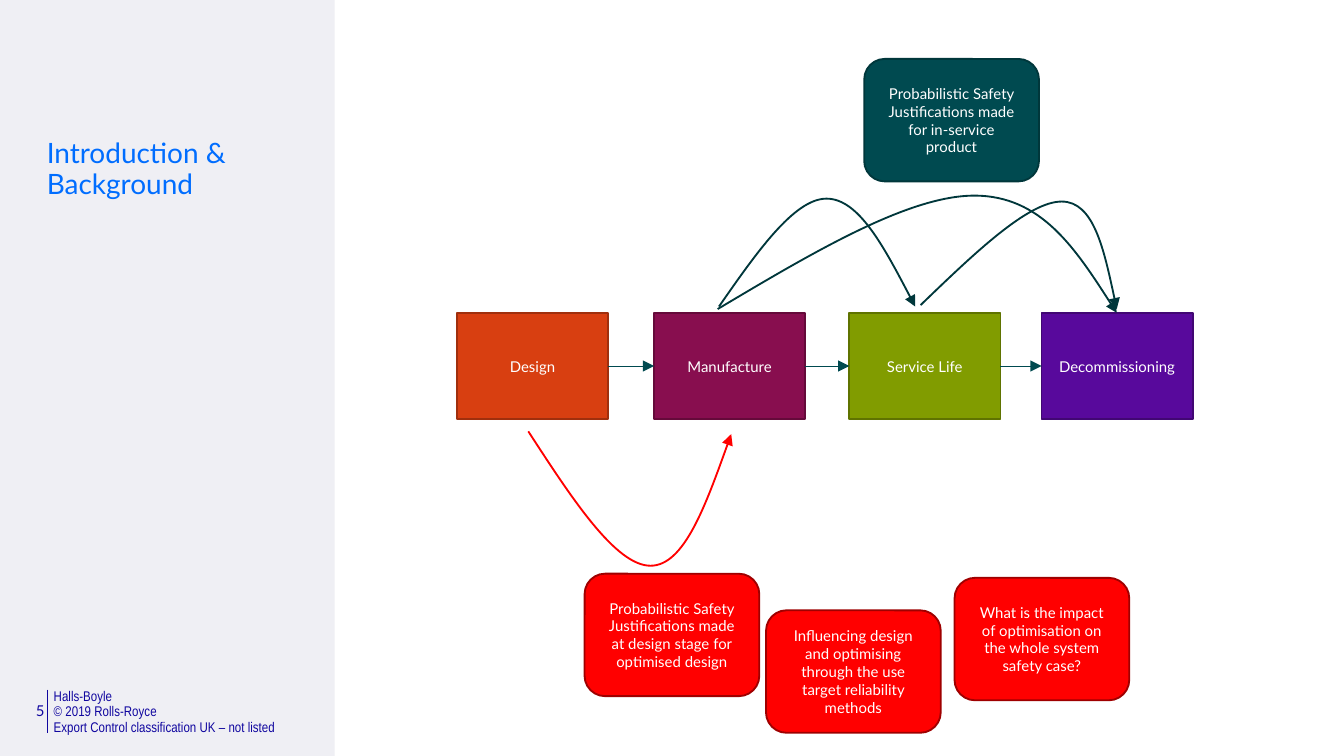
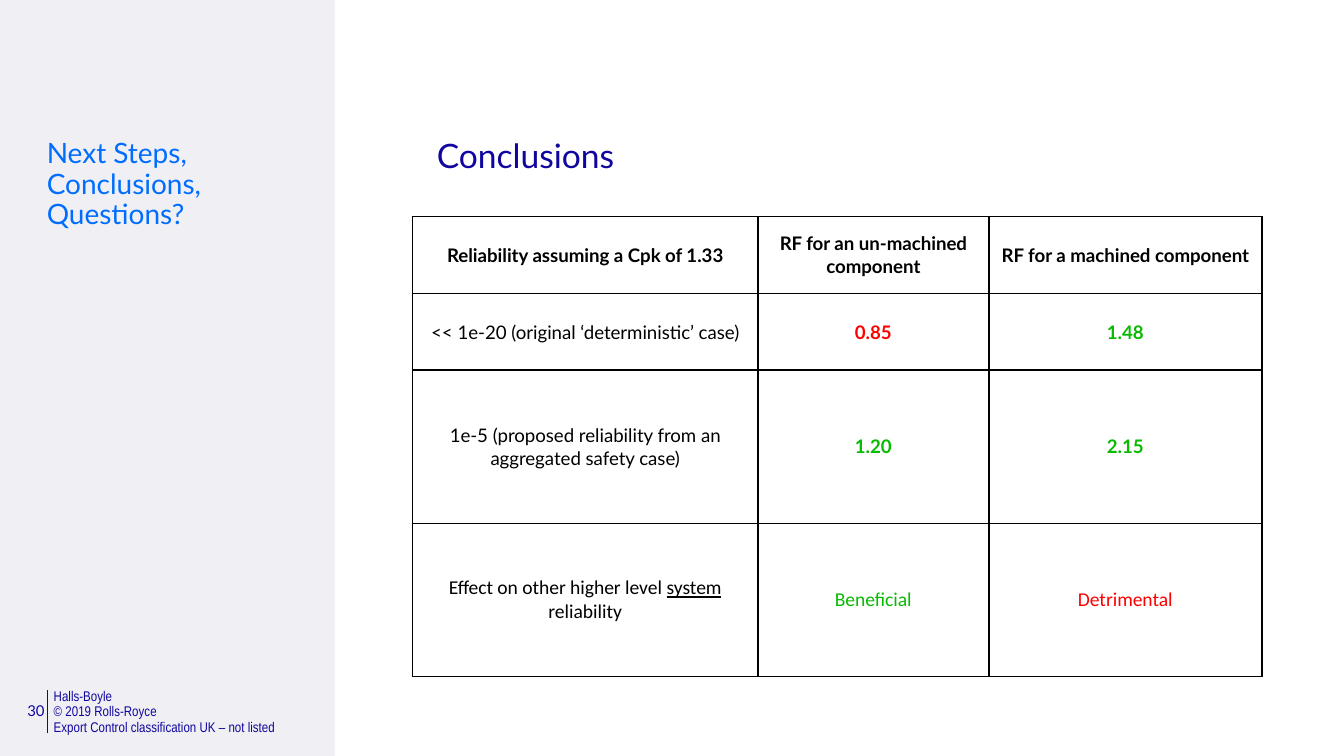
import pptx
import pptx.dml.color
import pptx.enum.shapes
import pptx.enum.text
import pptx.oxml
import pptx.oxml.ns
import pptx.util
from lxml import etree

Pt = pptx.util.Pt
ALIGN = pptx.enum.text.PP_ALIGN
ANCHOR = pptx.enum.text.MSO_ANCHOR
SHAPE = pptx.enum.shapes.MSO_SHAPE
qn = pptx.oxml.ns.qn

FONT = "Lato"
NAVY, BLUE, TEAL, DARK_TEAL = "10069F", "006DFF", "004A50", "00373B"
RED, DARK_RED, GREEN = "FF0000", "9F0000", "07BB00"
BLACK, WHITE, PALE = "000000", "FFFFFF", "EFEFF4"

FOOTER = [
    "Halls-Boyle",
    "© 2019 Rolls-Royce\vExport Control classification UK – not listed",
]

STAGES = [
    ("Design", 244.8, "D83F11", "A02F0D"),
    ("Manufacture", 350.4, "880E4F", "650A3A"),
    ("Service Life", 455, "819C00", "5F7300"),
    ("Decommissioning", 558, "58099C", "410773"),
]
STAGE_TOP, STAGE_WIDTH, STAGE_HEIGHT = 167.6, 81, 57

CALLOUTS = [
    ("Probabilistic Safety Justifications made for in-service product",
     463, 31.6, TEAL, DARK_TEAL),
    ("Probabilistic Safety Justifications made at design stage for optimised design",
     313.2, 307.4, RED, DARK_RED),
    ("Influencing design and optimising through the use target reliability methods",
     410.4, 327, RED, DARK_RED),
    ("What is the impact of optimisation on the whole system safety case?",
     511.4, 309.6, RED, DARK_RED),
]
CALLOUT_WIDTH, CALLOUT_HEIGHT = 93.6, 65.6

ARCS = [
    ((385.2, 164.2), (490.3, 164.2), 106.4, (425.5, 442.8, 460.1), DARK_TEAL),
    ((384.5, 165.6), (598.3, 167.6), 104.8, (486.7, 522, 558), DARK_TEAL),
    ((493.2, 163.5), (598.3, 165.6), 108, (550.8, 568.8, 586), DARK_TEAL),
    ((283, 231.1), (391.7, 232.6), 303.1, (329.8, 348.5, 366.5), RED),
]

COLUMN_WIDTHS = [185, 123.8, 146.2]
ROW_HEIGHTS = [41.2, 41.2, 82, 82]
RESULTS = [
    [("Reliability assuming a Cpk of 1.33", BLACK, True),
     ("RF for an un-machined component", BLACK, True),
     ("RF for a machined component", BLACK, True)],
    [("<< 1e-20 (original ‘deterministic’ case)", BLACK, False),
     ("0.85", RED, True), ("1.48", GREEN, True)],
    [("1e-5 (proposed reliability from an aggregated safety case)", BLACK, False),
     ("1.20", GREEN, True), ("2.15", GREEN, True)],
    [("Effect on other higher level system reliability", BLACK, False),
     ("Beneficial", GREEN, False), ("Detrimental", RED, False)],
]
UNDERLINED = "system"


def paint(target, colour):
    target.solid()
    target.fore_color.rgb = pptx.dml.color.RGBColor.from_string(colour)


def style(paragraph, size, colour, font=FONT, bold=False, align=ALIGN.LEFT, spacing=None):
    paragraph.alignment = align
    if spacing:
        paragraph.line_spacing = spacing
    paragraph.font.size = Pt(size)
    paragraph.font.name = font
    paragraph.font.bold = bold
    paint(paragraph.font.fill, colour)


def add_text(slide, left, top, width, height, lines, size, colour, inset=True, **look):
    frame = slide.shapes.add_textbox(Pt(left), Pt(top), Pt(width), Pt(height)).text_frame
    frame.word_wrap = True
    if not inset:
        frame.margin_left = frame.margin_right = 0
        frame.margin_top = frame.margin_bottom = 0
    for index, line in enumerate(lines):
        paragraph = frame.add_paragraph() if index else frame.paragraphs[0]
        paragraph.text = line
        style(paragraph, size, colour, **look)


def add_box(slide, kind, left, top, width, height, fill, outline=None, label=None):
    box = slide.shapes.add_shape(kind, Pt(left), Pt(top), Pt(width), Pt(height))
    box.shadow.inherit = False
    paint(box.fill, fill)
    if outline:
        paint(box.line.fill, outline)
        box.line.width = Pt(1)
    else:
        box.line.fill.background()
    if label:
        frame = box.text_frame
        frame.word_wrap = True
        frame.vertical_anchor = ANCHOR.MIDDLE
        frame.paragraphs[0].text = label
        style(frame.paragraphs[0], 8, WHITE, align=ALIGN.CENTER)
    return box


def add_arrowhead(arrow):
    stroke = arrow._element.spPr.find(qn("a:ln"))
    etree.SubElement(stroke, qn("a:tailEnd"), type="triangle")


def add_line(slide, x1, y1, x2, y2, colour):
    rule = slide.shapes.add_connector(
        pptx.enum.shapes.MSO_CONNECTOR.STRAIGHT, Pt(x1), Pt(y1), Pt(x2), Pt(y2))
    paint(rule.line.fill, colour)
    rule.line.width = Pt(0.5)
    etree.SubElement(rule._element.spPr, qn("a:effectLst"))
    return rule


def midpoint(a, b):
    return (a[0] + b[0]) / 2, (a[1] + b[1]) / 2


def add_arc(slide, start, end, peak, across, colour):
    rise, crest, fall = [(x, peak) for x in across]
    points = [midpoint(start, rise), rise, crest, fall, midpoint(fall, end), end]
    builder = slide.shapes.build_freeform(Pt(start[0]), Pt(start[1]))
    builder.add_line_segments([(Pt(x), Pt(y)) for x, y in points], close=False)
    arc = builder.convert_to_shape()
    segments = list(arc._element.iter(qn("a:lnTo")))
    outline = segments[0].getparent()
    for first in range(0, len(segments), 3):
        bend = etree.SubElement(outline, qn("a:cubicBezTo"))
        for segment in segments[first:first + 3]:
            bend.append(segment[0])
            outline.remove(segment)
    arc.shadow.inherit = False
    arc.fill.background()
    paint(arc.line.fill, colour)
    arc.line.width = Pt(1)
    add_arrowhead(arc)


def add_borders(cell):
    properties = cell._tc.get_or_add_tcPr()
    for side in ("a:lnL", "a:lnR", "a:lnT", "a:lnB"):
        border = etree.SubElement(properties, qn(side), w=str(int(Pt(1))))
        fill = etree.SubElement(border, qn("a:solidFill"))
        etree.SubElement(fill, qn("a:srgbClr"), val=BLACK)


def fill_cell(cell, text, colour, bold, size, font):
    cell.margin_left = cell.margin_right = Pt(4.3)
    cell.margin_top = cell.margin_bottom = 0
    cell.vertical_anchor = ANCHOR.MIDDLE
    add_borders(cell)
    cell.fill.background()
    paragraph = cell.text_frame.paragraphs[0]
    for part in filter(None, text.partition(UNDERLINED)):
        run = paragraph.add_run()
        run.text = part
        if part == UNDERLINED:
            run.font.underline = True
    style(paragraph, size, colour, font, bold, ALIGN.CENTER)


def add_results(slide):
    table = slide.shapes.add_table(
        len(RESULTS), len(COLUMN_WIDTHS), Pt(221), Pt(116),
        Pt(sum(COLUMN_WIDTHS)), Pt(sum(ROW_HEIGHTS))).table
    table.first_row = table.horz_banding = False
    for column, width in zip(table.columns, COLUMN_WIDTHS):
        column.width = Pt(width)
    for row, height, entries in zip(table.rows, ROW_HEIGHTS, RESULTS):
        row.height = Pt(height)
        size, font = (10.5, "Calibri") if entries is RESULTS[-1] else (10, FONT)
        for cell, entry in zip(row.cells, entries):
            fill_cell(cell, *entry, size, font)


def add_page(deck, number, section):
    slide = deck.slides.add_slide(deck.slide_layouts[6])
    paint(slide.background.fill, PALE)
    add_line(slide, 25.2, 369.5, 25.2, 392.5, NAVY)
    add_text(slide, 28.8, 369.5, 160, 24.5, FOOTER, 7.5, NAVY,
             inset=False, font="Arial Narrow", spacing=0.9)
    add_box(slide, SHAPE.RECTANGLE, 179.3, 0, 540.7, 405, WHITE)
    add_text(slide, 3.6, 372.2, 27.4, 17.3, [str(number)], 8, NAVY, align=ALIGN.RIGHT)
    add_text(slide, 18, 71.3, 140.4, 75.6, [section], 15, BLUE, spacing=0.9)
    return slide


def add_life_cycle(slide):
    stages = [
        add_box(slide, SHAPE.RECTANGLE, left, STAGE_TOP, STAGE_WIDTH, STAGE_HEIGHT,
                fill, outline, name)
        for name, left, fill, outline in STAGES
    ]
    for stage, following in zip(stages, stages[1:]):
        step = add_line(slide, 0, 0, 0, 0, TEAL)
        step.begin_connect(stage, 3)
        step.end_connect(following, 1)
        add_arrowhead(step)
    for arc in ARCS:
        add_arc(slide, *arc)
    for text, left, top, fill, outline in CALLOUTS:
        add_box(slide, SHAPE.ROUNDED_RECTANGLE, left, top, CALLOUT_WIDTH,
                CALLOUT_HEIGHT, fill, outline, text)


def main():
    deck = pptx.Presentation()
    deck.slide_width, deck.slide_height = Pt(720), Pt(405)
    add_life_cycle(add_page(deck, 5, "Introduction & Background"))
    conclusions = add_page(deck, 30, "Next Steps, Conclusions, Questions?")
    add_text(conclusions, 234, 74.9, 459.4, 54.7, ["Conclusions"], 18, NAVY,
             inset=False, spacing=0.9)
    add_results(conclusions)
    deck.save("out.pptx")


if __name__ == "__main__":
    main()
